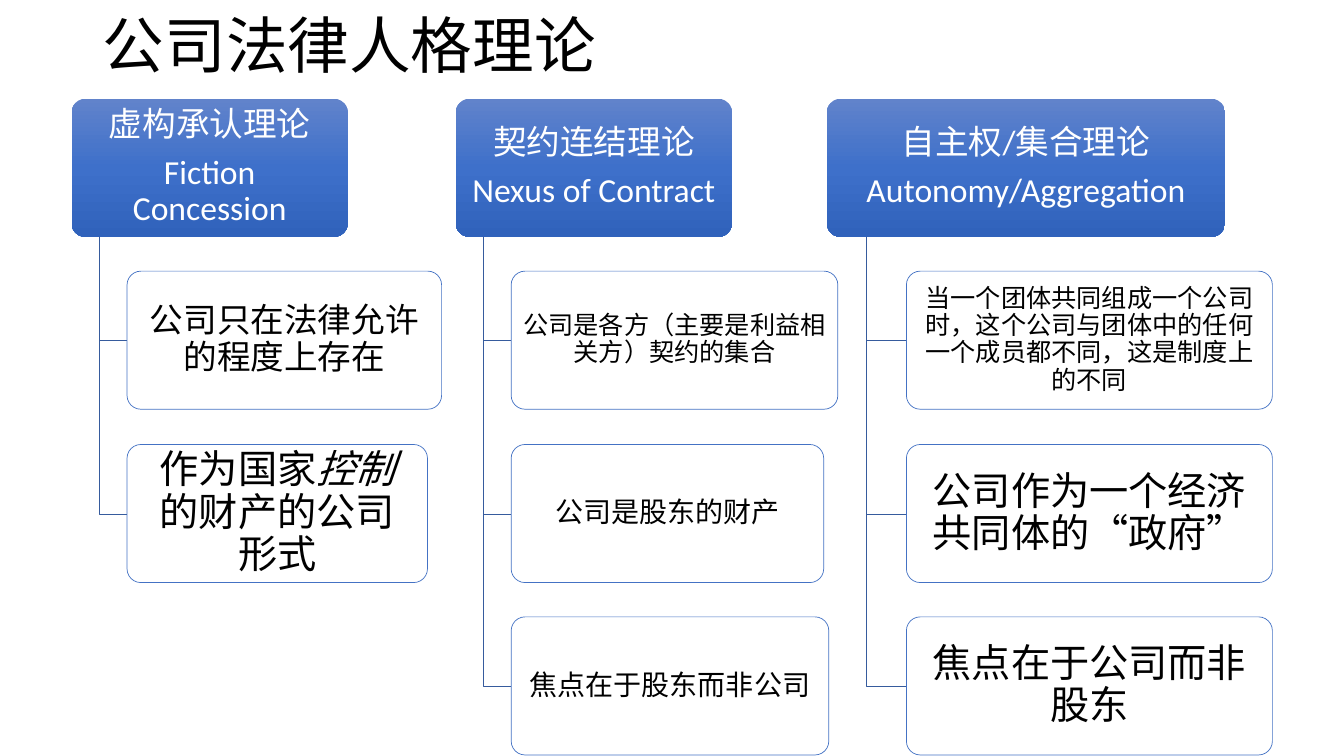
from copy import deepcopy

from pptx import Presentation
from pptx.dml.color import RGBColor
from pptx.enum.shapes import MSO_SHAPE as Preset
from pptx.enum.text import MSO_ANCHOR as Anchor, MSO_AUTO_SIZE as AutoSize, PP_ALIGN as Align
from pptx.util import Pt

COLORS = {
    "black": "000000",
    "white": "FFFFFF",
    "edge": "4472C4",
    "branch": "365B9D",
    "header_top": "6183CB",
    "header_middle": "3E70CA",
    "header_bottom": "3062BB",
}
EMU_PER_PX = 9144
FONT = "Calibri"
TOP, BOX_HEIGHT, TWO_ROWS = 98, 137, 343
MARGINS = {18: (8, 7), 20: (8, 7), 24: (9, 7), 28: (10, 8)}

THEORIES = [
    {
        "left": 71, "width": 274, "trunk": 99, "indent": 126,
        "header": ["虚构承认理论", "Fiction Concession"],
        "points": [
            (312, 24, ["公司只在法律允许的程度上存在"]),
            (298, 28, ["作为国家", "控制", "的财产的公司形式"]),
        ],
    },
    {
        "left": 452, "width": 274, "trunk": 479, "indent": 507,
        "header": ["契约连结理论", "Nexus of Contract"],
        "points": [
            (324, 18, ["公司是各方（主要是利益相关方）契约的集合"]),
            (310, 20, ["公司是股东的财产"]),
            (315, 20, ["焦点在于股东而非公司"]),
        ],
    },
    {
        "left": 820, "width": 395, "trunk": 859, "indent": 899,
        "header": ["自主权/集合理论", "Autonomy/Aggregation"],
        "points": [
            (363, 18, ["当一个团体共同组成一个公司时，这个公司与团体中的任何一个成员都不同，这是制度上的不同"]),
            (363, 28, ["公司作为一个经济共同体的“政府”"]),
            (363, 28, ["焦点在于公司而非股东"]),
        ],
    },
]


def px(value):
    return value * EMU_PER_PX


def color(name):
    return RGBColor.from_string(COLORS[name])


def row_top(row):
    return TOP + TWO_ROWS * row // 2


class TheorySlide:
    def __init__(self, presentation):
        self.slide = presentation.slides.add_slide(presentation.slide_layouts[5])

    def style(self, paragraph, size, color_name, align):
        paragraph.alignment = align
        paragraph.line_spacing = 0.9
        paragraph.font.name = FONT
        paragraph.font.size = Pt(size)
        paragraph.font.color.rgb = color(color_name)

    def title(self, text, left, top, width, height):
        title = self.slide.shapes.title
        title.left, title.top, title.width, title.height = map(px, (left, top, width, height))
        title.text_frame.text = text
        title.text_frame.auto_size = AutoSize.NONE
        title.text_frame.vertical_anchor = Anchor.MIDDLE
        self.style(title.text_frame.paragraphs[0], 44, "black", Align.LEFT)

    def box(self, left, top, width, size, color_name, paragraphs):
        shape = self.slide.shapes.add_shape(
            Preset.ROUNDED_RECTANGLE, px(left), px(top), px(width), px(BOX_HEIGHT))
        shape.adjustments[0] = 0.1
        shape.shadow.inherit = False
        frame = shape.text_frame
        frame.word_wrap = True
        frame.vertical_anchor = Anchor.MIDDLE
        side, edge = MARGINS[size]
        frame.margin_left = frame.margin_right = px(side)
        frame.margin_top = frame.margin_bottom = px(edge)
        for index, parts in enumerate(paragraphs):
            paragraph = frame.add_paragraph() if index else frame.paragraphs[0]
            self.style(paragraph, size, color_name, Align.CENTER)
            if index < len(paragraphs) - 1:
                paragraph.space_after = Pt(size * 0.35)
            for position, part in enumerate(parts):
                run = paragraph.add_run()
                run.text = part
                if position % 2:
                    run.font.italic = True
        return shape

    def header(self, left, width, lines):
        shape = self.box(left, TOP, width, 24, "white", [[line] for line in lines])
        shape.line.fill.background()
        shape.fill.gradient()
        shape.fill.gradient_angle = 270
        first_stop = shape._element.spPr.find(".//{*}gs")
        first_stop.addnext(deepcopy(first_stop))
        names = ("header_top", "header_middle", "header_bottom")
        for index, (stop, name) in enumerate(zip(shape.fill.gradient_stops, names)):
            stop.position = index / 2
            stop.color.rgb = color(name)

    def branch(self, trunk, indent, row):
        middle = row_top(row) + BOX_HEIGHT // 2 + 1
        builder = self.slide.shapes.build_freeform(trunk, TOP + BOX_HEIGHT, scale=EMU_PER_PX)
        builder.add_line_segments([(trunk, middle), (indent, middle)], close=False)
        shape = builder.convert_to_shape()
        shape.shadow.inherit = False
        shape.fill.background()
        shape.line.color.rgb = color("branch")
        shape.line.width = Pt(0.5)

    def point(self, left, row, width, size, parts):
        shape = self.box(left, row_top(row), width, size, "black", [parts])
        shape.fill.solid()
        shape.fill.fore_color.rgb = color("white")
        shape.line.color.rgb = color("edge")
        shape.line.width = Pt(0.5)

    def theory(self, theory):
        self.header(theory["left"], theory["width"], theory["header"])
        for row, (width, size, parts) in enumerate(theory["points"], start=1):
            self.branch(theory["trunk"], theory["indent"], row)
            self.point(theory["indent"], row, width, size, parts)


def main():
    presentation = Presentation()
    presentation.slide_width = px(1333)
    presentation.slide_height = px(750)
    page = TheorySlide(presentation)
    page.title("公司法律人格理论", 92, 0, 1150, 97)
    for theory in THEORIES:
        page.theory(theory)
    presentation.save("out.pptx")


if __name__ == "__main__":
    main()
